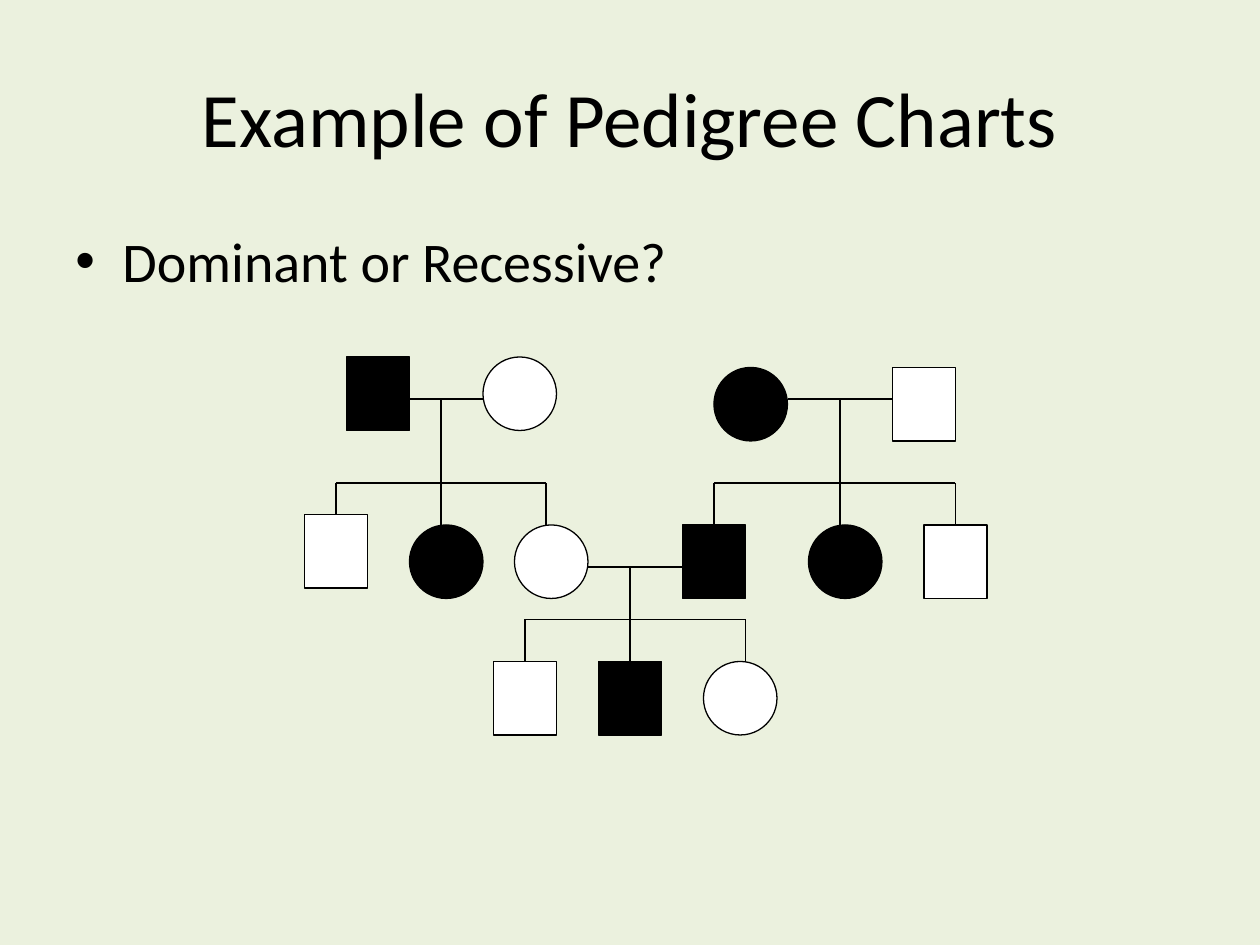
from lxml.etree import SubElement
from pptx import Presentation
from pptx.dml.color import RGBColor
from pptx.enum.shapes import MSO_CONNECTOR, MSO_SHAPE
from pptx.enum.text import MSO_ANCHOR, PP_ALIGN
from pptx.oxml.ns import qn
from pptx.util import Cm, Pt

BACKGROUND = RGBColor(0xEB, 0xF1, 0xDE)
BLACK = RGBColor(0, 0, 0)
WHITE = RGBColor(255, 255, 255)
FONT = "Calibri"
UNIT = Cm(2.54) / 12  # the pedigree sits on a grid of twelfths of an inch

deck = Presentation()
deck.slide_width, deck.slide_height = Cm(25.4), Cm(19.05)
page = deck.slides.add_slide(deck.slide_layouts[5])
page.background.fill.solid()
page.background.fill.fore_color.rgb = BACKGROUND


def grid(*steps):
    return [round(step * UNIT) for step in steps]


def write(frame, text, size):
    frame.word_wrap = True
    para = frame.paragraphs[0]
    para.text = text
    para.font.name, para.font.size = FONT, Pt(size)
    para.font.color.rgb = BLACK
    return para


# Title
title = page.shapes.title
title.left, title.top, title.width, title.height = Cm(1.27), Cm(0.76), Cm(22.86), Cm(3.18)
title.text_frame.vertical_anchor = MSO_ANCHOR.MIDDLE
write(title.text_frame, "Example of Pedigree Charts", 44).alignment = PP_ALIGN.CENTER

# Bulleted question
body = page.shapes.add_textbox(Cm(1.27), Cm(4.45), Cm(22.86), Cm(12.57))
question = write(body.text_frame, "Dominant or Recessive?", 32)
properties = question._p.get_or_add_pPr()
properties.set("marL", str(Cm(0.95)))
properties.set("indent", str(Cm(-0.95)))
SubElement(properties, qn("a:buFont")).set("typeface", "Arial")
SubElement(properties, qn("a:buChar")).set("char", "•")

# People: left, top, affected (in grid steps)
males = [(33, 34, True), (85, 35, False), (29, 49, False), (88, 50, False),
         (57, 63, True), (47, 63, False), (65, 50, True)]
females = [(46, 34, False), (49, 50, False), (68, 35, True),
           (67, 63, False), (77, 50, True), (39, 50, True)]
pedigree = page.shapes.add_group_shape()
for people, kind, width in ((males, MSO_SHAPE.RECTANGLE, 6), (females, MSO_SHAPE.OVAL, 7)):
    for left, top, affected in people:
        person = pedigree.shapes.add_shape(kind, *grid(left, top, width, 7))
        person.shadow.inherit = False
        person.fill.solid()
        person.fill.fore_color.rgb = BLACK if affected else WHITE
        person.line.color.rgb = BLACK
        person.line.width = Pt(0.75)

# Families: couple's left, right and height, stem, sibling bar, children's x and top
families = [
    (39, 46, 38, 42, 46, [(32, 49), (42, 50), (52, 50)]),
    (75, 85, 38, 80, 46, [(68, 50), (80, 50), (91, 50)]),
    (56, 65, 54, 60, 59, [(50, 63), (60, 63), (71, 63)]),
]
for left, right, couple, stem, bar, children in families:
    lines = [(left, couple, right, couple), (stem, couple, stem, bar),
             (children[0][0], bar, children[-1][0], bar)]
    lines += [(x, bar, x, top) for x, top in children]
    for ends in lines:
        line = pedigree.shapes.add_connector(MSO_CONNECTOR.STRAIGHT, *grid(*ends))
        line.line.color.rgb = BLACK
        line.line.width = Pt(0.75)
        SubElement(line._element.spPr, qn("a:effectLst"))

deck.save("out.pptx")
